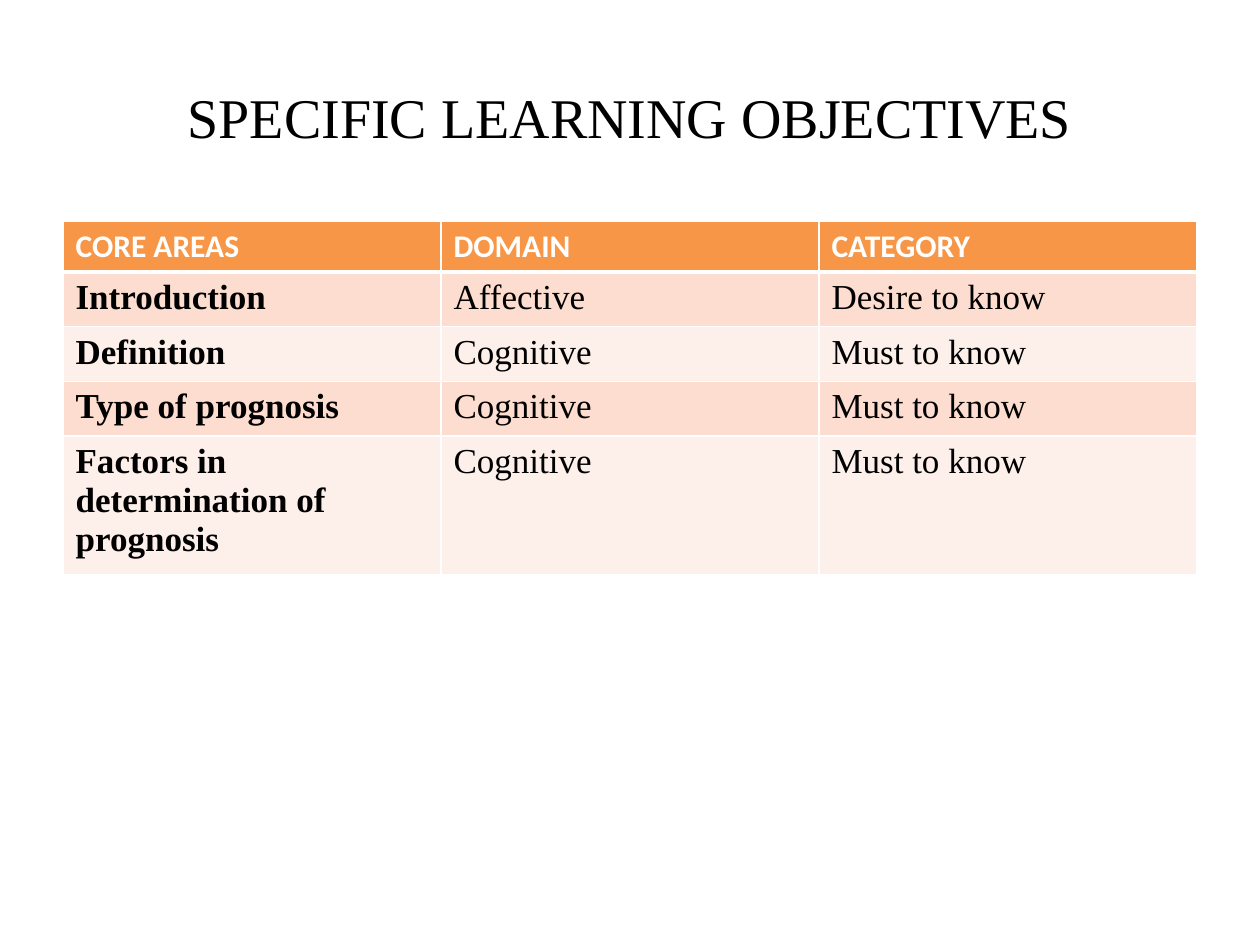
from lxml.etree import SubElement as Sub
from pptx import Presentation
from pptx.dml.color import RGBColor as RGB
from pptx.enum.text import MSO_ANCHOR as Anchor, PP_ALIGN as Align
from pptx.oxml.ns import qn
from pptx.util import Pt

# Content
TITLE = "SPECIFIC LEARNING OBJECTIVES"
ROWS = [
    ("CORE AREAS", "DOMAIN", "CATEGORY"),
    ("Introduction", "Affective", "Desire to know"),
    ("Definition", "Cognitive", "Must to know"),
    ("Type of prognosis", "Cognitive", "Must to know"),
    ("Factors in determination of prognosis", "Cognitive", "Must to know"),
]

# Look
BLACK = RGB(0x00, 0x00, 0x00)
WHITE = RGB(0xFF, 0xFF, 0xFF)
ORANGE = RGB(0xF7, 0x96, 0x46)
BANDS = [RGB(0xFD, 0xEF, 0xE9), RGB(0xFC, 0xDD, 0xCF)]
HEAD = {"name": "Calibri", "size": Pt(18), "bold": True}
BODY = {"name": "Times New Roman", "size": Pt(20)}
TOP = {"name": "Times New Roman", "size": Pt(32)}

# Layout in px
PX = 914400 // 126
LEFT, WIDTH = 63, 1134
ROW_H = 51


def px(*nums):
    return [n * PX for n in nums]


def write(frame, text, look, color):
    para = frame.paragraphs[0]
    run = para.add_run()
    run.text = text
    for key, val in look.items():
        setattr(run.font, key, val)
    run.font.color.rgb = color
    return para


def edge(cell, side, width):
    line = Sub(cell._tc.get_or_add_tcPr(), qn(f"a:ln{side}"), w=str(Pt(width)))
    fill = Sub(line, qn("a:solidFill"))
    Sub(fill, qn("a:srgbClr"), val=str(WHITE))


deck = Presentation()
deck.slide_width, deck.slide_height = px(1260, 945)
slide = deck.slides.add_slide(deck.slide_layouts[6])

# Title
box = slide.shapes.add_textbox(*px(LEFT, 38, WIDTH, 157))
frame = box.text_frame
frame.word_wrap = True
frame.vertical_anchor = Anchor.MIDDLE
write(frame, TITLE, TOP, BLACK).alignment = Align.CENTER

# Table: the last row grows with its text
count = len(ROWS)
table = slide.shapes.add_table(
    count, len(ROWS[0]), *px(LEFT, 221, WIDTH, ROW_H * count)).table
for r, row in enumerate(ROWS):
    for c, text in enumerate(row):
        cell = table.cell(r, c)
        for side in "LRTB":
            thick = (r == 0 and side == "B") or (r == 1 and side == "T")
            edge(cell, side, 3 if thick else 1)
        cell.fill.solid()
        cell.fill.fore_color.rgb = BANDS[r % 2] if r else ORANGE
        look = {**BODY, "bold": c == 0} if r else HEAD
        write(cell.text_frame, text, look, BLACK if r else WHITE)

deck.save("out.pptx")
